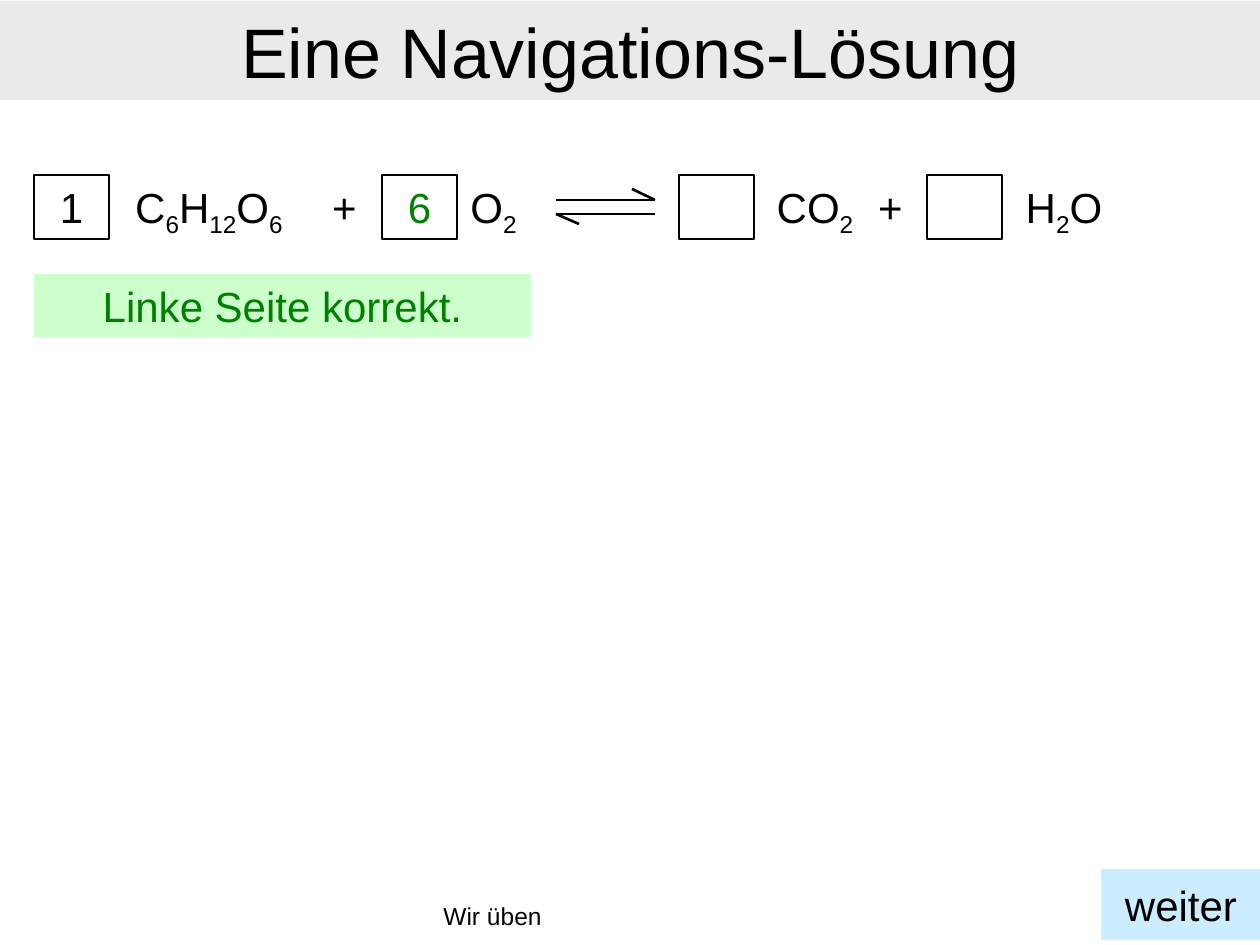
from itertools import groupby

from lxml import etree
from pptx import Presentation
from pptx.dml.color import RGBColor
from pptx.enum.shapes import MSO_CONNECTOR, MSO_SHAPE
from pptx.enum.text import MSO_ANCHOR, PP_ALIGN
from pptx.oxml.ns import qn
from pptx.util import Emu, Pt

PX = 914400 // 126
RECTANGLE = MSO_SHAPE.RECTANGLE
BUTTON = MSO_SHAPE.ACTION_BUTTON_CUSTOM
STRAIGHT = MSO_CONNECTOR.STRAIGHT
LEFT, CENTER = PP_ALIGN.LEFT, PP_ALIGN.CENTER
TOP, MIDDLE = MSO_ANCHOR.TOP, MSO_ANCHOR.MIDDLE

BLACK = RGBColor(0x00, 0x00, 0x00)
GREEN = RGBColor(0x00, 0x80, 0x00)
PALE_GREEN = RGBColor(0xCC, 0xFF, 0xCC)
PALE_BLUE = RGBColor(0xCC, 0xEC, 0xFF)
GREY = RGBColor(0xEA, 0xEA, 0xEA)

EQUATION_TOP, EQUATION_HEIGHT = 175, 64
COEFFICIENT_WIDTH = 75
# left, text, colour
COEFFICIENTS = [(34, "1", BLACK), (382, "6", GREEN), (679, "", BLACK), (927, "", BLACK)]
# left, width, text
TERMS = [
    (110, 198, "C6H12O6"),
    (307, 75, "+"),
    (456, 75, "O2"),
    (753, 124, "CO2"),
    (853, 75, "+"),
    (1002, 124, "H2O"),
]
# start x, start y, end x, end y
EQUILIBRIUM_LINES = [
    (556, 200, 655, 200),
    (655, 200, 632, 189),
    (655, 214, 556, 214),
    (556, 214, 579, 224),
]


def px(*lengths):
    return [Emu(length * PX) for length in lengths]


def write(box, text, size=24, color=BLACK, align=CENTER, anchor=TOP, formula=False):
    """Fill the box with one paragraph; in a formula, digits become subscripts."""
    frame = box.text_frame
    frame.word_wrap = True
    frame.vertical_anchor = anchor
    para = frame.paragraphs[0]
    para.alignment = align
    parts = [(False, text)]
    if formula:
        parts = [(digit, "".join(chars)) for digit, chars in groupby(text, str.isdigit)]
    for subscript, part in parts:
        span = para.add_run()
        span.text = part
        span.font.name = "Arial"
        span.font.size = Pt(size)
        span.font.color.rgb = color
        if subscript:
            span.font._element.set("baseline", "-25000")


def add_box(page, area, kind=RECTANGLE, fill=None, line=None):
    box = page.shapes.add_shape(kind, *px(*area))
    box.shadow.inherit = False
    if fill is None:
        box.fill.background()
    else:
        box.fill.solid()
        box.fill.fore_color.rgb = fill
    if line is None:
        box.line.fill.background()
    else:
        box.line.color.rgb = line
        box.line.width = Pt(0.75)
    return box


def add_equation(page):
    for left, text, color in COEFFICIENTS:
        area = (left, EQUATION_TOP, COEFFICIENT_WIDTH, EQUATION_HEIGHT)
        box = add_box(page, area, line=BLACK)
        if text:
            write(box, text, color=color)
    for left, width, text in TERMS:
        area = (left, EQUATION_TOP, width, EQUATION_HEIGHT)
        write(page.shapes.add_textbox(*px(*area)), text, formula=True)
    arrows = page.shapes.add_group_shape()
    for ends in EQUILIBRIUM_LINES:
        line = arrows.shapes.add_connector(STRAIGHT, *px(*ends))
        line.line.color.rgb = BLACK
        line.line.width = Pt(1.5)
        etree.SubElement(line._element.spPr, qn("a:effectLst"))


def main():
    deck = Presentation()
    deck.slide_width, deck.slide_height = px(1260, 945)
    page = deck.slides.add_slide(deck.slide_layouts[6])

    footer = page.shapes.add_textbox(*px(431, 895, 399, 49))
    write(footer, "Wir üben", size=14, align=LEFT)
    title = add_box(page, (0, 1, 1260, 99), fill=GREY)
    write(title, "Eine Navigations-Lösung", size=40, anchor=MIDDLE)
    add_equation(page)
    button = add_box(page, (1101, 869, 160, 71), kind=BUTTON, fill=PALE_BLUE)
    write(button, "weiter", anchor=MIDDLE)
    feedback = add_box(page, (34, 274, 497, 63), fill=PALE_GREEN)
    write(feedback, "Linke Seite korrekt.", color=GREEN)

    deck.save("out.pptx")


if __name__ == "__main__":
    main()
